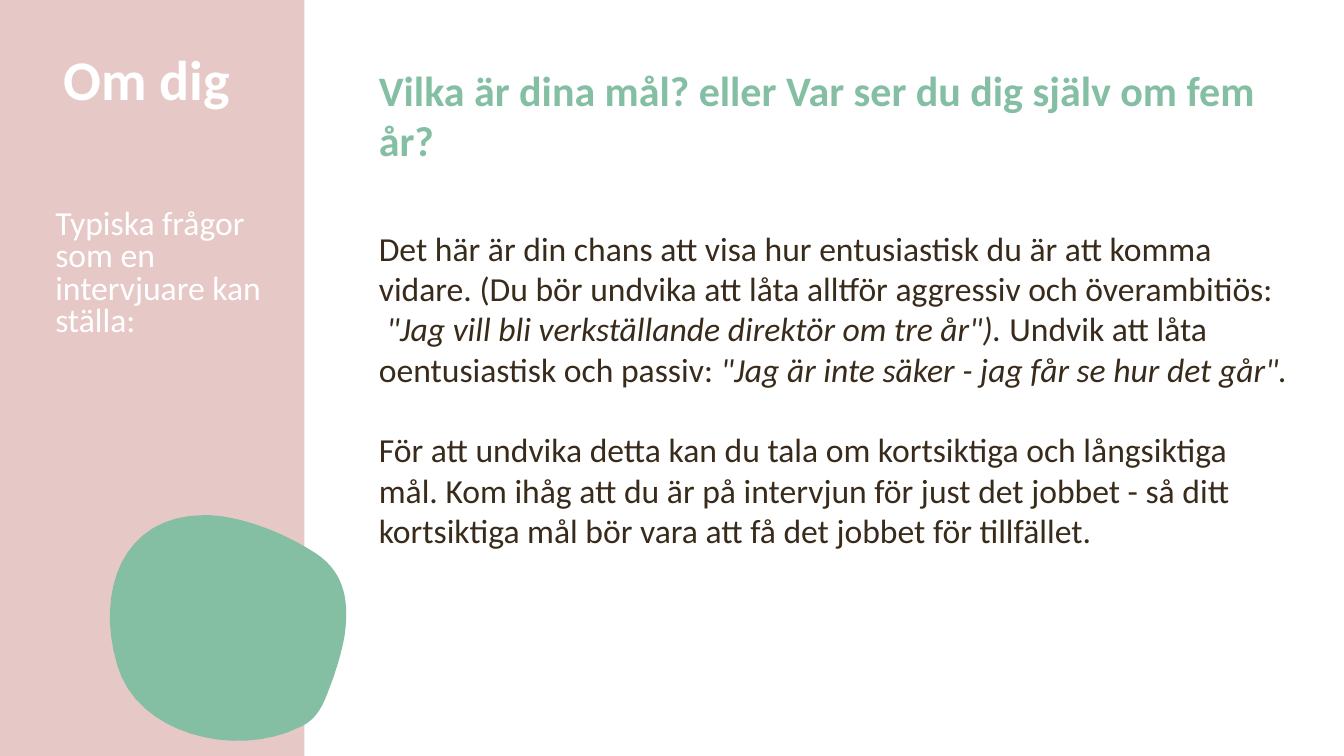
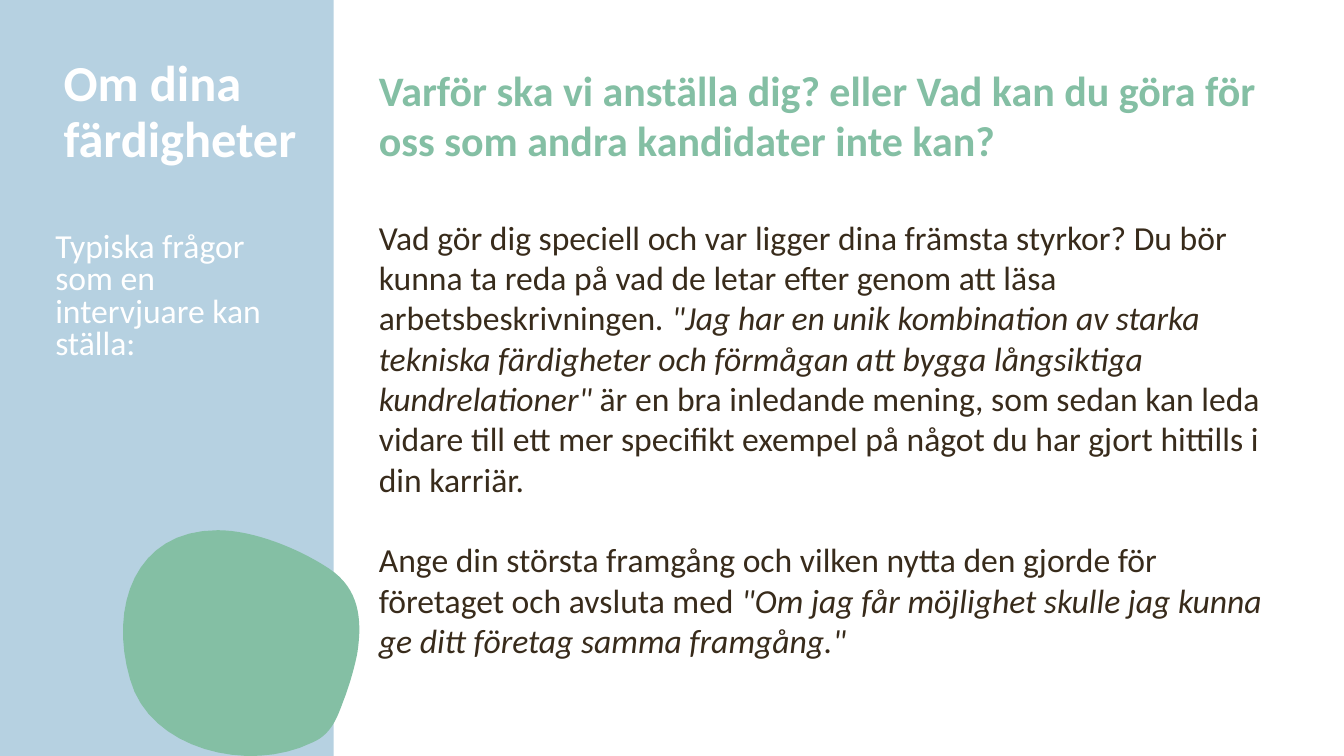
import pptx
import pptx.util
import pptx.dml.color
import pptx.enum.shapes
import pptx.enum.text

Pt = pptx.util.Pt
RGBColor = pptx.dml.color.RGBColor

# Grid: 40 columns by 30 rows
WIDTH, HEIGHT = pptx.util.Inches(13.33), pptx.util.Inches(7.5)
COL, ROW = WIDTH / 40, HEIGHT / 30

WHITE = RGBColor(0xFF, 0xFF, 0xFF)
PINK = RGBColor(0xE6, 0xC8, 0xC7)
BLUE = RGBColor(0xB6, 0xD1, 0xE1)
GREEN = RGBColor(0x84, 0xBF, 0xA4)
BROWN = RGBColor(0x38, 0x2B, 0x1B)
FONT = "Calibri"

# Blob outline as shares of its box: start, then two handles and an end per curve
START = (0.99, 0.54)
CURVES = [
    ((1.01, 0.40), (1.00, 0.26), (0.87, 0.17)),
    ((0.74, 0.08), (0.55, 0.00), (0.40, 0.00)),
    ((0.05, 0.00), (-0.06, 0.34), (0.03, 0.66)),
    ((0.11, 0.97), (0.53, 1.08), (0.80, 0.94)),
    ((0.89, 0.90), (0.91, 0.81), (0.94, 0.73)),
    ((0.96, 0.67), (0.98, 0.60), START),
]
STEPS = 16

PROMPT = "Typiska frågor som en intervjuare kan ställa:"

# Body text: paragraphs of (text, italic) runs
GOALS = [
    [("Det här är din chans att visa hur entusiastisk du är att komma vidare. "
      "(Du bör undvika att låta alltför aggressiv och överambitiös:", False)],
    [(' "Jag vill bli verkställande direktör om tre år"). ', True),
     ("Undvik att låta oentusiastisk och passiv: ", False),
     ('"Jag är inte säker - jag får se hur det går".', True)],
    [("För att undvika detta kan du tala om kortsiktiga och långsiktiga mål. "
      "Kom ihåg att du är på intervjun för just det jobbet - så ditt "
      "kortsiktiga mål bör vara att få det jobbet för tillfället.", False)],
]
SKILLS = [
    [("Vad gör dig speciell och var ligger dina främsta styrkor? Du bör kunna "
      "ta reda på vad de letar efter genom att läsa arbetsbeskrivningen", False),
     ('. "Jag har en unik kombination av starka tekniska färdigheter och '
      'förmågan att bygga långsiktiga kundrelationer" ', True),
     ("är en bra inledande mening, som sedan kan leda vidare till ett mer "
      "specifikt exempel på något du har gjort hittills i din karriär.", False)],
    [("Ange din största framgång och vilken nytta den gjorde för företaget "
      "och avsluta med ", False),
     ('"Om jag får möjlighet skulle jag kunna ge ditt företag samma framgång."',
      True)],
]


def grid(left, top, wide, high):
    """Turn columns and rows into slide lengths."""
    return [round(n) for n in (left * COL, top * ROW, wide * COL, high * ROW)]


def paint(shape, color):
    shape.fill.solid()
    shape.fill.fore_color.rgb = color
    shape.line.fill.background()
    shape.shadow.inherit = False


def style(para, size, color, bold=False, line=None):
    para.alignment = pptx.enum.text.PP_ALIGN.LEFT
    if line:
        para.line_spacing = Pt(line)
    for run in para.runs:
        font = run.font
        font.name, font.size, font.bold = FONT, Pt(size), bold
        font.color.rgb = color


def frame(shape):
    text = shape.text_frame
    text.word_wrap = True
    text.auto_size = pptx.enum.text.MSO_AUTO_SIZE.NONE
    text.vertical_anchor = pptx.enum.text.MSO_ANCHOR.TOP
    return text


def label(slide, box, words, *look):
    text = frame(slide.shapes.add_textbox(*box))
    text.text = words
    style(text.paragraphs[0], *look)


def band(slide, box, color):
    kind = pptx.enum.shapes.MSO_SHAPE.RECTANGLE
    paint(slide.shapes.add_shape(kind, *box), color)


def head(slide, box, words, size):
    title = slide.shapes.title
    title.left, title.top, title.width, title.height = box
    text = frame(title)
    text.text = words
    style(text.paragraphs[0], size, WHITE, True, 40.2)
    # Bring the title in front of the band
    title.element.getparent().append(title.element)


def body(slide, box, paras, gap):
    """Fill the main text; the last paragraph stands one line apart."""
    text = frame(slide.shapes.add_textbox(*box))
    for index, parts in enumerate(paras):
        para = text.add_paragraph() if index else text.paragraphs[0]
        for words, slant in parts:
            run = para.add_run()
            run.text = words
            run.font.italic = slant
        style(para, 24, BROWN)
    para.space_before = Pt(gap)


def blob(slide, box):
    left, top, wide, high = box

    def spot(x, y):
        return round(left + x * wide), round(top + y * high)

    points, last = [], START
    for curve in CURVES:
        ends = list(zip(last, *curve))
        for step in range(1, STEPS + 1):
            t = step / STEPS
            u = 1 - t
            points.append(spot(*(
                a * u**3 + 3 * b * u * u * t + 3 * c * u * t * t + d * t**3
                for a, b, c, d in ends)))
        last = curve[-1]
    pen = slide.shapes.build_freeform(*spot(*START))
    pen.add_line_segments(points, close=True)
    paint(pen.convert_to_shape(), GREEN)


def page(deck, color, side, title, size, drop, ask, paras, top, spot):
    """Build one question slide, with a side band that is side columns wide."""
    slide = deck.slides.add_slide(deck.slide_layouts[5])
    band(slide, grid(0, 0, side, 30), color)
    head(slide, grid(1.59, 2, side - 2.3, 10), title, size)
    label(slide, grid(1.35, drop, side - 2.3, 9), PROMPT, 24, WHITE, False, 23.2)
    label(slide, grid(10.98, 2.36, 27.7, 2.28), ask, 30, GREEN, True)
    body(slide, grid(10.98, top, 27.7, 28.32 - top), paras, 28.8)
    blob(slide, grid(*spot, 7.05, 8.96))


def main():
    deck = pptx.Presentation()
    deck.slide_width, deck.slide_height = WIDTH, HEIGHT
    page(deck, PINK, 9.06, "Om dig", 40, 8.12,
         "Vilka är dina mål? eller Var ser du dig själv om fem år?",
         GOALS, 8.84, (3.27, 20.44))
    page(deck, BLUE, 9.93, "Om dina färdigheter", 36, 9.04,
         "Varför ska vi anställa dig? eller Vad kan du göra för oss som andra "
         "kandidater inte kan?",
         SKILLS, 8.4, (3.66, 21.04))
    deck.save("out.pptx")


if __name__ == "__main__":
    main()
